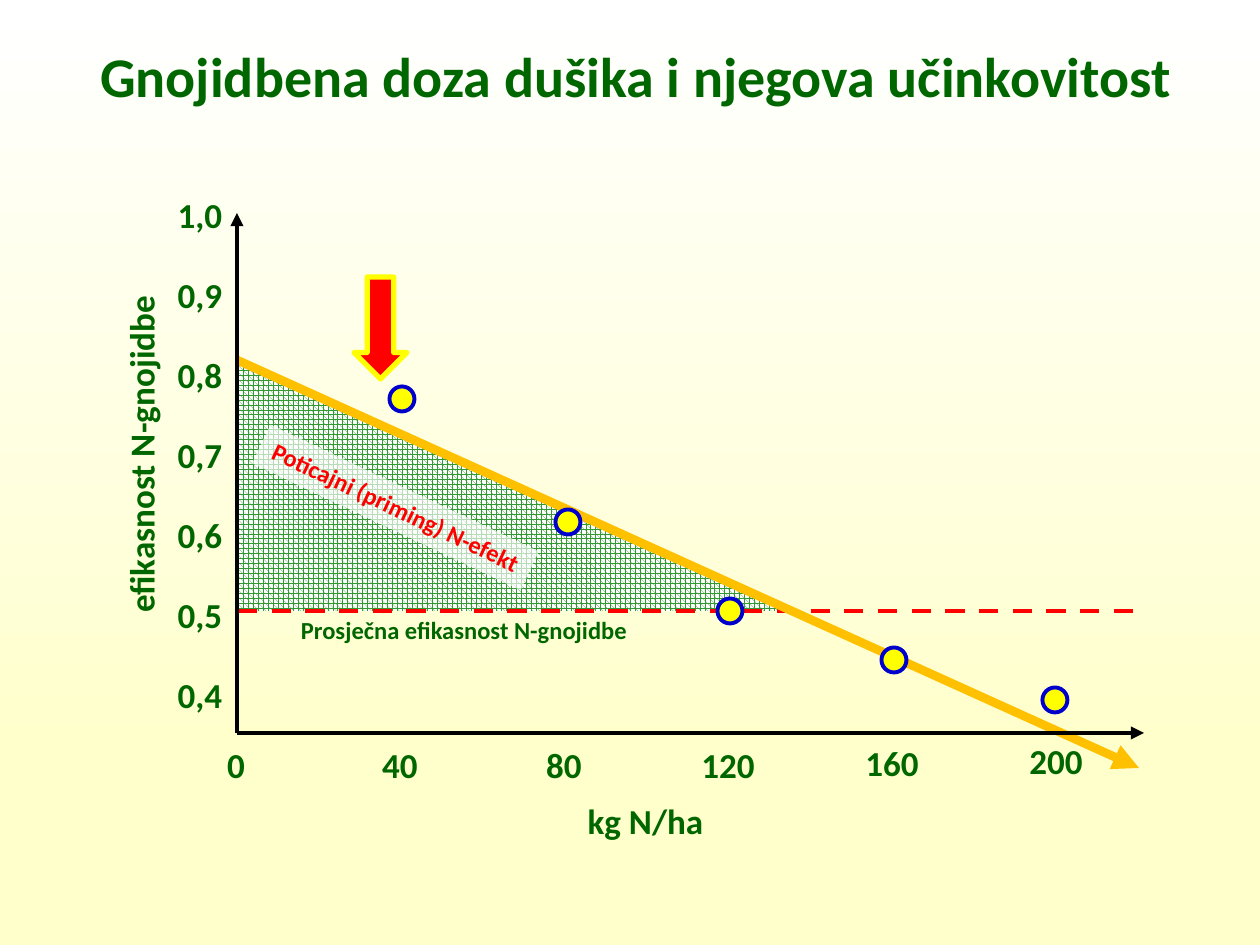
from lxml.etree import SubElement
from pptx import Presentation
from pptx.dml.color import RGBColor
from pptx.enum.dml import MSO_LINE, MSO_PATTERN
from pptx.enum.shapes import MSO_CONNECTOR, MSO_SHAPE
from pptx.enum.text import MSO_ANCHOR, PP_ALIGN
from pptx.oxml.ns import qn
from pptx.util import Pt

PX = 914400 / 126
GREEN, RED, YELLOW, WHITE = "006600", "FF0000", "FFFF00", "FFFFFF"


def px(n):
    return round(n * PX)


def rgb(value):
    return RGBColor.from_string(value)


def fill_solid(sp, color, alpha=None):
    sp.fill.solid()
    sp.fill.fore_color.rgb = rgb(color)
    if alpha:
        node = sp.fill._xPr.find(qn("a:solidFill"))[0]
        SubElement(node, qn("a:alpha"), val=str(alpha * 1000))


def write(sp, text, size=20, color=GREEN, inset=0, anchor=MSO_ANCHOR.TOP,
          wrap=False, spacing=None):
    tf = sp.text_frame
    tf.word_wrap = wrap
    tf.vertical_anchor = anchor
    tf.margin_left = tf.margin_right = px(inset)
    tf.margin_top = tf.margin_bottom = px(inset / 2)
    p = tf.paragraphs[0]
    p.alignment = PP_ALIGN.CENTER
    if spacing:
        p.line_spacing = spacing
    r = p.add_run()
    r.text = text
    r.font.name = "Calibri"
    r.font.size = Pt(size)
    r.font.bold = True
    r.font.color.rgb = rgb(color)


def add_text(s, text, x, y, w, h, rotation=0, **fmt):
    sp = s.shapes.add_textbox(px(x), px(y), px(w), px(h))
    sp.rotation = rotation
    write(sp, text, **fmt)


def add_shape(s, kind, x, y, w, h, color, line=None, width=0, alpha=None):
    sp = s.shapes.add_shape(kind, px(x), px(y), px(w), px(h))
    sp.shadow.inherit = False
    fill_solid(sp, color, alpha)
    if line:
        sp.line.color.rgb = rgb(line)
        sp.line.width = Pt(width)
    else:
        sp.line.fill.background()
    return sp


def add_line(s, x1, y1, x2, y2, color, width, arrow=False, dash=None):
    c = s.shapes.add_connector(MSO_CONNECTOR.STRAIGHT, px(x1), px(y1), px(x2), px(y2))
    c.line.color.rgb = rgb(color)
    c.line.width = Pt(width)
    if dash:
        c.line.dash_style = dash
    if arrow:
        SubElement(c.line._get_or_add_ln(), qn("a:tailEnd"), type="triangle")
    SubElement(c._element.spPr, qn("a:effectLst"))


def draw_background(s):
    fill = s.background.fill
    fill.gradient()
    fill.gradient_angle = 270
    for stop, color, position in zip(fill.gradient_stops, (WHITE, "FFFFCC"), (0, 0.8)):
        stop.color.rgb = rgb(color)
        stop.position = position


def draw_title(s, x, y, w, h):
    add_text(s, "Gnojidbena doza dušika i njegova učinkovitost", x, y, w, h, size=32,
             inset=12, anchor=MSO_ANCHOR.BOTTOM, wrap=True, spacing=0.9)


def draw_plot(s, x, y, w, h):
    mean_y = y + 398
    trend_y = y + 147

    # Priming area between the trend and the average
    fb = s.shapes.build_freeform(x, trend_y, scale=PX)
    fb.add_line_segments([(x, mean_y), (x + 557, mean_y)], close=True)
    area = fb.convert_to_shape()
    area.shadow.inherit = False
    area.fill.patterned()
    area.fill.pattern = MSO_PATTERN.SPHERE
    area.fill.fore_color.rgb = rgb("339933")
    area.fill.back_color.rgb = rgb(WHITE)
    area.line.fill.background()

    # Average, trend and axes
    add_line(s, x + 1, mean_y, x + w - 1, mean_y, RED, 2.75, dash=MSO_LINE.DASH)
    add_line(s, x, trend_y, x + 902, y + 555, "FFC000", 5, arrow=True)
    add_line(s, x, y + h, x, y, "000000", 2.5, arrow=True)
    add_line(s, x, y + h, x + w, y + h, "000000", 2.5, arrow=True)

    # Axis titles and tick labels
    add_text(s, "kg N/ha", x + 350, y + 586, 117, 44)
    add_text(s, "efikasnost N-gnojidbe", x - 256, y + 220, 320, 43, rotation=270)
    for i, label in enumerate(("1,0", "0,9", "0,8", "0,7", "0,6", "0,5", "0,4")):
        add_text(s, label, x - 60, y - 20 + 80 * i, 46, 44)
    for i, drop in enumerate((10, 10, 10, 10, 8, 7)):
        add_text(s, str(40 * i), x - 28 + 164 * i, y + h + drop, 54, 44)

    # Measured points
    d = 25
    for cx, cy in ((165, 186), (331, 309), (493, 398), (657, 447), (818, 487)):
        add_shape(s, MSO_SHAPE.OVAL, x + cx - d / 2, y + cy - d / 2, d, d,
                  YELLOW, "0000CC", 2.25)

    # Marker arrow and notes
    add_shape(s, MSO_SHAPE.DOWN_ARROW, x + 117, y + 64, 53, 102, RED, YELLOW, 3)
    note = add_shape(s, MSO_SHAPE.RECTANGLE, x + 10, y + 273, 297, 43, WHITE, alpha=65)
    note.rotation = 25.3
    write(note, "Poticajni (priming) N-efekt", size=14, color=RED, inset=12)
    add_text(s, "Prosječna efikasnost N-gnojidbe", x + 50, mean_y - 2, 354, 43,
             size=14, inset=12)


def main():
    prs = Presentation()
    prs.slide_width, prs.slide_height = px(1260), px(945)
    s = prs.slides.add_slide(prs.slide_layouts[6])
    draw_background(s)
    draw_title(s, 42, 38, 1188, 78)
    draw_plot(s, 237, 213, 907, 520)
    prs.save("out.pptx")


if __name__ == "__main__":
    main()
